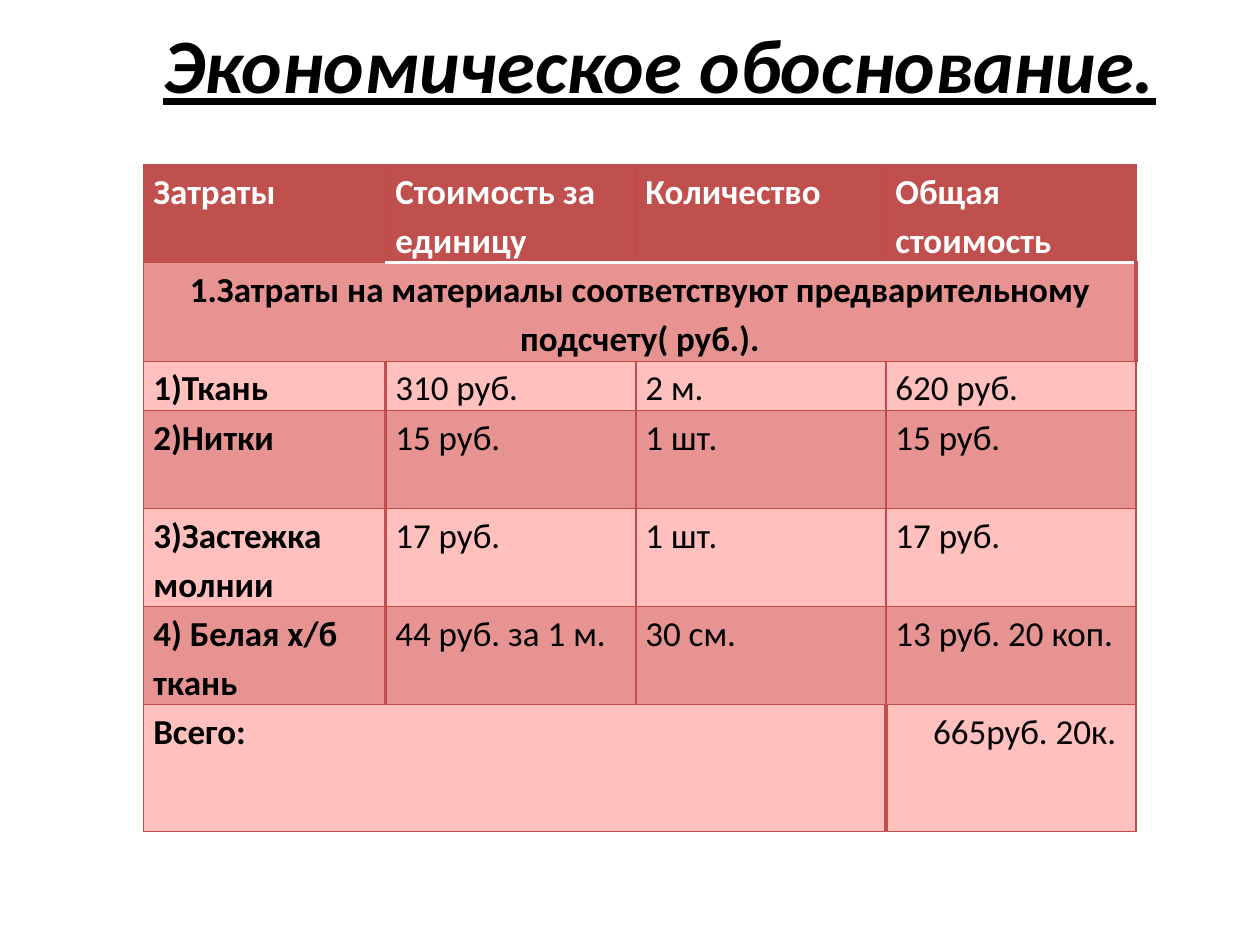
from lxml.etree import SubElement
from pptx import Presentation
from pptx.dml.color import RGBColor
from pptx.enum.text import MSO_ANCHOR, PP_ALIGN
from pptx.oxml.ns import qn
from pptx.util import Cm, Pt

COLORS = {
    "black": "000000",
    "white": "FFFFFF",
    "header": "C0504D",
    "dark": "E69391",
    "light": "FFC0BE",
    "line": "BF4C48",
}
THIN = ("line", 0.75)
THICK = ("header", 2)
WHITE = ("white", 2)

COLUMN_WIDTHS = [4.88, 5.04, 5.04, 5.04]
ROW_HEIGHTS = [1.98, 1.98, 0.99, 1.98, 1.98, 1.98, 2.55]
ROW_FILLS = ["header", "dark", "light", "dark", "light", "dark", "light"]
COSTS = [
    ["Затраты", "Стоимость за единицу", "Количество", "Общая стоимость"],
    ["1.Затраты на материалы соответствуют предварительному подсчету( руб.).", "", "", ""],
    ["1)Ткань", "310 руб.", "2 м.", "620 руб."],
    ["2)Нитки", "15 руб.", "1 шт.", "15 руб."],
    ["3)Застежка молнии", "17 руб.", "1 шт.", "17 руб."],
    ["4) Белая х/б ткань", "44 руб. за 1 м.", "30 см.", "13 руб. 20 коп."],
    ["Всего:", "", "", "665руб. 20к."],
]
SECTION_ROW, TOTAL_ROW, LAST_COLUMN = 1, 6, 3


def cell_borders(row, column):
    borders = {"L": THIN, "R": THIN, "T": THIN, "B": THIN}
    if row == 0 and column > 0:
        borders["B"] = WHITE
    if row == SECTION_ROW:
        if column > 0:
            borders["T"] = WHITE
        borders["R"] = THICK
    elif row > SECTION_ROW:
        divider = 2 if row == TOTAL_ROW else 0
        if column == divider or (row == TOTAL_ROW and column == 0):
            borders["R"] = THICK
        if column == divider + 1:
            borders["L"] = THICK
    return borders


class SlideBuilder:
    def __init__(self, slide, font):
        self.slide = slide
        self.font = font

    def add_run(self, paragraph, text, size, color, bold=False, italic=False, underline=False):
        run = paragraph.add_run()
        run.text = text
        run.font.name = self.font
        run.font.size = Pt(size)
        run.font.bold = bold
        run.font.italic = italic
        run.font.underline = underline
        run.font.color.rgb = RGBColor.from_string(COLORS[color])

    def add_title(self, text, left, top, width, height):
        shape = self.slide.shapes.add_textbox(Cm(left), Cm(top), Cm(width), Cm(height))
        frame = shape.text_frame
        frame.word_wrap = True
        frame.vertical_anchor = MSO_ANCHOR.MIDDLE
        paragraph = frame.paragraphs[0]
        paragraph.alignment = PP_ALIGN.CENTER
        self.add_run(paragraph, text, 44, "black", bold=True, italic=True, underline=True)

    def set_borders(self, cell, borders):
        properties = cell._tc.get_or_add_tcPr()
        for side, (color, width) in borders.items():
            line = SubElement(properties, qn(f"a:ln{side}"), w=str(Pt(width)))
            fill = SubElement(line, qn("a:solidFill"))
            SubElement(fill, qn("a:srgbClr"), val=COLORS[color])

    def fill_cell(self, cell, text, row, column):
        self.set_borders(cell, cell_borders(row, column))
        cell.fill.solid()
        cell.fill.fore_color.rgb = RGBColor.from_string(COLORS[ROW_FILLS[row]])
        cell.margin_left = cell.margin_right = Cm(0.19)
        cell.margin_top = cell.margin_bottom = Cm(0)
        if not text:
            return
        paragraph = cell.text_frame.paragraphs[0]
        paragraph.line_spacing = 1.15
        if row == SECTION_ROW:
            paragraph.alignment = PP_ALIGN.CENTER
        if row == TOTAL_ROW and column == LAST_COLUMN:
            paragraph._p.get_or_add_pPr().set("marL", str(Cm(0.76)))
        color = "white" if row == 0 else "black"
        self.add_run(paragraph, text, 20, color, bold=row <= SECTION_ROW or column == 0)

    def add_cost_table(self, left, top):
        shape = self.slide.shapes.add_table(
            len(COSTS), len(COLUMN_WIDTHS), Cm(left), Cm(top),
            Cm(sum(COLUMN_WIDTHS)), Cm(sum(ROW_HEIGHTS)))
        table = shape.table
        table.horz_banding = False
        for column, width in zip(table.columns, COLUMN_WIDTHS):
            column.width = Cm(width)
        for row, height in zip(table.rows, ROW_HEIGHTS):
            row.height = Cm(height)
        for row, texts in enumerate(COSTS):
            for column, text in enumerate(texts):
                self.fill_cell(table.cell(row, column), text, row, column)
        for row, last in ((SECTION_ROW, LAST_COLUMN), (TOTAL_ROW, LAST_COLUMN - 1)):
            table.cell(row, 0).merge(table.cell(row, last))


def main():
    presentation = Presentation()
    presentation.slide_width = Cm(25.4)
    presentation.slide_height = Cm(19.05)
    slide = presentation.slides.add_slide(presentation.slide_layouts[6])
    builder = SlideBuilder(slide, "Calibri")
    builder.add_title("Экономическое обоснование.", 2.5, 0, 21.6, 2.54)
    builder.add_cost_table(2.9, 3.32)
    presentation.save("out.pptx")


if __name__ == "__main__":
    main()
